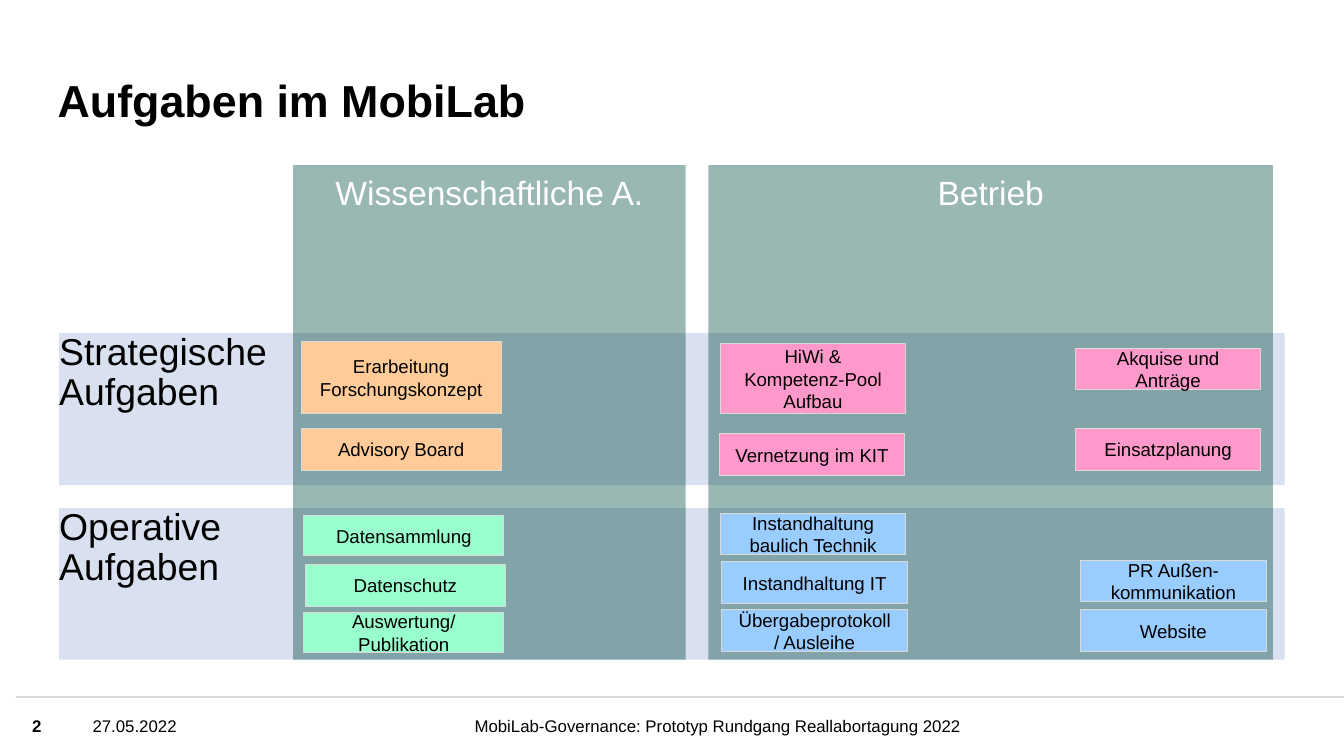
"""Build the slide on tasks in the MobiLab."""
from lxml.etree import SubElement
from pptx import Presentation
from pptx.dml.color import RGBColor as RGB
from pptx.enum.shapes import MSO_CONNECTOR as LINE, MSO_SHAPE as SHAPE
from pptx.enum.text import MSO_ANCHOR as ANCHOR, PP_ALIGN as ALIGN
from pptx.oxml.ns import qn
from pptx.util import Cm, Pt

BLACK = RGB(0x00, 0x00, 0x00)
WHITE = RGB(0xFF, 0xFF, 0xFF)
GREY = RGB(0xD9, 0xD9, 0xD9)
PALE = RGB(0xD9, 0xE0, 0xEF)
TEAL = RGB(0x00, 0x4B, 0x41)
BLUE = RGB(0x99, 0xCC, 0xFF)
PEACH = RGB(0xFF, 0xCC, 0x99)
MINT = RGB(0x99, 0xFF, 0xCC)
PINK = RGB(0xFF, 0x99, 0xCC)


def write(shape, text, size, color=BLACK, bold=False, align=ALIGN.LEFT,
          anchor=ANCHOR.MIDDLE, inset=True, space=1.0):
    frame = shape.text_frame
    frame.text = text
    frame.word_wrap = True
    frame.vertical_anchor = anchor
    if not inset:
        frame.margin_left = frame.margin_right = 0
        frame.margin_top = frame.margin_bottom = 0
    for para in frame.paragraphs:
        para.alignment = align
        para.line_spacing = space
        for run in para.runs:
            run.font.name = "Arial"
            run.font.size = Pt(size)
            run.font.bold = bold
            run.font.color.rgb = color


def block(left, top, width, height, fill):
    shape = slide.shapes.add_shape(
        SHAPE.RECTANGLE, Cm(left), Cm(top), Cm(width), Cm(height))
    shape.shadow.inherit = False
    shape.fill.solid()
    shape.fill.fore_color.rgb = fill
    shape.line.fill.background()
    return shape


deck = Presentation()
deck.slide_width, deck.slide_height = Cm(25.4), Cm(14.29)
slide = deck.slides.add_slide(deck.slide_layouts[6])

rule = slide.shapes.add_connector(
    LINE.STRAIGHT, Cm(0.3), Cm(13.18), Cm(25.4), Cm(13.18))
rule.line.color.rgb = GREY
rule.line.width = Pt(1)
SubElement(rule.element.spPr, qn("a:effectLst"))

labels = [
    ("Aufgaben im MobiLab", 1.09, 0.81, 19.08, 1.6, 24, True, ANCHOR.BOTTOM, 0.9),
    ("2", 0.61, 13.18, 0.91, 1.09, 9, True, ANCHOR.MIDDLE, 1.0),
    ("27.05.2022", 1.75, 13.18, 2.84, 1.09, 9, False, ANCHOR.MIDDLE, 1.0),
    ("MobiLab-Governance: Prototyp Rundgang Reallabortagung 2022",
     8.97, 13.18, 9.75, 1.09, 9, False, ANCHOR.MIDDLE, 1.0),
]
for text, left, top, width, height, size, bold, anchor, space in labels:
    label = slide.shapes.add_textbox(Cm(left), Cm(top), Cm(width), Cm(height))
    write(label, text, size, bold=bold, anchor=anchor, inset=False, space=space)

for text, top in [("Strategische\vAufgaben", 6.3), ("Operative\vAufgaben", 9.6)]:
    band = block(1.12, top, 23.16, 2.87, PALE)
    write(band, text, 20, anchor=ANCHOR.TOP, inset=False, space=0.9)

for text, left, width in [("Wissenschaftliche A.", 5.54, 7.42),
                          ("Betrieb", 13.39, 10.67)]:
    column = block(left, 3.12, width, 9.35, TEAL)
    tint = column.element.spPr.find(qn("a:solidFill")).find(qn("a:srgbClr"))
    SubElement(tint, qn("a:alpha")).set("val", "40000")
    write(column, text, 18, WHITE, align=ALIGN.CENTER, anchor=ANCHOR.TOP)

groups = [
    (PEACH, 3.78, [
        ("Erarbeitung Forschungskonzept", 5.69, 6.45, 1.37),
        ("Advisory Board", 5.69, 8.1, 0.79),
    ]),
    (MINT, 3.78, [
        ("Datensammlung", 5.74, 9.75, 0.76),
        ("Datenschutz", 5.77, 10.67, 0.79),
        ("Auswertung/\vPublikation", 5.74, 11.58, 0.76),
    ]),
    (PINK, 3.51, [
        ("HiWi & Kompetenz-Pool Aufbau", 13.61, 6.5, 1.32),
        ("Vernetzung im KIT", 13.59, 8.2, 0.79),
        ("Akquise und Anträge", 20.32, 6.58, 0.79),
        ("Einsatzplanung", 20.32, 8.1, 0.79),
    ]),
    (BLUE, 3.51, [
        ("Instandhaltung baulich Technik", 13.61, 9.7, 0.79),
        ("Instandhaltung IT", 13.64, 10.62, 0.79),
        ("Übergabeprotokoll / Ausleihe", 13.64, 11.53, 0.79),
        ("PR Außen- kommunikation", 20.42, 10.59, 0.79),
        ("Website", 20.42, 11.53, 0.79),
    ]),
]
for fill, width, tasks in groups:
    for text, left, top, height in tasks:
        card = block(left, top, width, height, fill)
        card.line.color.rgb = GREY
        card.line.width = Pt(0.5)
        write(card, text, 10, align=ALIGN.CENTER)

deck.save("out.pptx")
